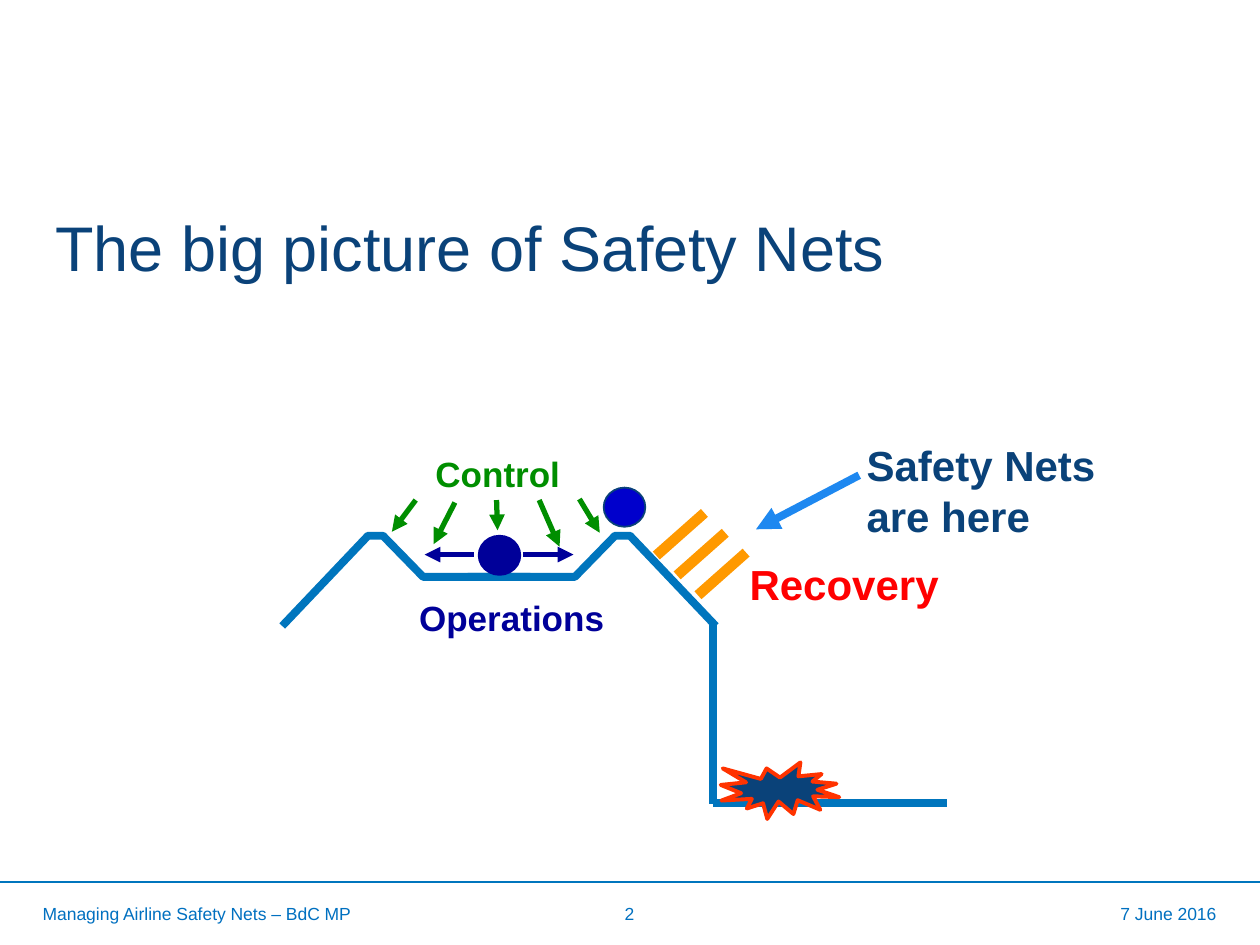
from dataclasses import dataclass

from lxml.etree import SubElement
from pptx import Presentation
from pptx.dml.color import RGBColor as Rgb
from pptx.enum.shapes import MSO_CONNECTOR as Connector, MSO_SHAPE as Shape
from pptx.enum.text import MSO_ANCHOR as Anchor, PP_ALIGN as Align
from pptx.oxml.ns import qn
from pptx.util import Cm, Pt


@dataclass(frozen=True)
class Theme:
    font: str = "Arial"
    title_size: int = 36
    large_size: int = 24
    label_size: int = 20
    footer_size: int = 10
    navy: str = "0A4279"
    ridge: str = "0075BD"
    footer: str = "0070C0"
    control: str = "008E00"
    operations: str = "000099"
    escaped: str = "0000CC"
    recovery: str = "FF0000"
    net: str = "FF9900"
    pointer: str = "1E88F0"
    crash: str = "FF3300"


THEME = Theme()
RIDGE_WIDTH = 4.5
ARROW_WIDTH = 3


def style_line(line, color, width):
    line.color.rgb = Rgb.from_string(color)
    line.width = Pt(width)


def style_paragraph(paragraph, size, color, bold=False, align=Align.LEFT):
    paragraph.alignment = align
    paragraph.font.name = THEME.font
    paragraph.font.size = Pt(size)
    paragraph.font.bold = bold
    paragraph.font.color.rgb = Rgb.from_string(color)


def add_title(slide, text):
    title = slide.shapes.title
    title.left, title.top, title.width, title.height = Cm(0.86), Cm(3.61), Cm(23.39), Cm(2.92)
    title.text_frame.text = text
    title.text_frame.vertical_anchor = Anchor.MIDDLE
    paragraph = title.text_frame.paragraphs[0]
    paragraph.line_spacing = 0.9
    style_paragraph(paragraph, THEME.title_size, THEME.navy)


def add_text(slide, box, text, size, color, bold=True, align=Align.LEFT, wrap=False):
    frame = slide.shapes.add_textbox(*map(Cm, box)).text_frame
    frame.word_wrap = wrap
    frame.text = text
    for paragraph in frame.paragraphs:
        style_paragraph(paragraph, size, color, bold, align)


def add_line(slide, start, end, color, width, arrow=False):
    line = slide.shapes.add_connector(Connector.STRAIGHT, *map(Cm, (*start, *end)))
    style_line(line.line, color, width)
    properties = line._element.spPr
    if arrow:
        SubElement(properties.find(qn("a:ln")), qn("a:tailEnd"), type="triangle")
    SubElement(properties, qn("a:effectLst"))


def add_filled_shape(slide, kind, box, fill, outline, width=1):
    shape = slide.shapes.add_shape(kind, *map(Cm, box))
    shape.shadow.inherit = False
    shape.fill.solid()
    shape.fill.fore_color.rgb = Rgb.from_string(fill)
    style_line(shape.line, outline, width)


def add_open_path(slide, points):
    first, *rest = [(Cm(x), Cm(y)) for x, y in points]
    builder = slide.shapes.build_freeform(*first)
    builder.add_line_segments(rest, close=False)
    shape = builder.convert_to_shape()
    shape.shadow.inherit = False
    shape.fill.background()
    style_line(shape.line, THEME.ridge, RIDGE_WIDTH)


def add_ridge(slide):
    # The right slope mirrors the left one
    left = [(5.69, 12.62), (7.42, 10.8), (7.72, 10.8), (8.53, 11.63), (10.69, 11.63), (9.73, 11.63)]
    add_open_path(slide, [(20.12 - x, y) for x, y in left])
    add_open_path(slide, left)


def add_control(slide):
    add_text(slide, (8.03, 8.99, 4.01, 1.09), "Control", THEME.label_size, THEME.control,
             align=Align.CENTER, wrap=True)
    arrows = [
        ((8.38, 10.08), (7.9, 10.72)),
        ((9.17, 10.13), (8.74, 10.97)),
        ((10.01, 10.08), (10.03, 10.69)),
        ((10.87, 10.08), (11.28, 11.02)),
        ((11.68, 10.06), (12.09, 10.74)),
    ]
    for start, end in arrows:
        add_line(slide, start, end, THEME.control, ARROW_WIDTH, arrow=True)


def add_recovery(slide):
    add_text(slide, (14.86, 11.13, 4.37, 1.3), "Recovery", THEME.large_size, THEME.recovery)
    for index in range(3):
        across, down = 0.42 * index, 0.4 * index
        add_line(slide, (14.2 + across, 10.34 + down), (13.23 + across, 11.2 + down), THEME.net, 6)


def add_operations(slide):
    add_filled_shape(slide, Shape.OVAL, (9.65, 10.8, 0.84, 0.79), THEME.operations, THEME.operations)
    for start, end in ((9.55, 8.56), (10.54, 11.56)):
        add_line(slide, (start, 11.18), (end, 11.18), THEME.operations, ARROW_WIDTH, arrow=True)
    add_text(slide, (8.2, 11.91, 4.24, 1.09), "Operations", THEME.label_size, THEME.operations)


def add_drop(slide):
    add_line(slide, (14.38, 12.57), (14.38, 16.2), THEME.ridge, RIDGE_WIDTH)
    add_line(slide, (14.38, 16.18), (19.1, 16.18), THEME.ridge, RIDGE_WIDTH)
    add_filled_shape(slide, Shape.EXPLOSION1, (14.53, 15.37, 2.39, 1.14),
                     THEME.navy, THEME.crash, 2.25)


def add_callout(slide):
    add_text(slide, (17.22, 8.74, 5.18, 2.31), "Safety Nets\nare here", THEME.large_size, THEME.navy)
    add_line(slide, (17.32, 9.58), (15.24, 10.67), THEME.pointer, RIDGE_WIDTH, arrow=True)


def add_footer(slide):
    add_line(slide, (0, 17.78), (25.4, 17.78), THEME.ridge, 1.5)
    entries = [
        (0.61, 8.69, "Managing Airline Safety Nets – BdC MP", Align.LEFT),
        (11, 3.38, "2", Align.CENTER),
        (16.31, 8.46, "7 June 2016", Align.RIGHT),
    ]
    for left, width, text, align in entries:
        add_text(slide, (left, 18.08, width, 0.64), text, THEME.footer_size, THEME.footer,
                 bold=False, align=align, wrap=True)


def main():
    presentation = Presentation()
    presentation.slide_width, presentation.slide_height = Cm(25.4), Cm(19.05)
    slide = presentation.slides.add_slide(presentation.slide_layouts[5])
    add_title(slide, "The big picture of Safety Nets")

    # Ball that has left normal operations
    add_filled_shape(slide, Shape.OVAL, (12.17, 9.83, 0.84, 0.79), THEME.escaped, THEME.navy)

    # Landscape and what happens in it
    add_ridge(slide)
    add_control(slide)
    add_recovery(slide)
    add_operations(slide)
    add_drop(slide)
    add_callout(slide)

    add_footer(slide)
    presentation.save("out.pptx")


if __name__ == "__main__":
    main()
